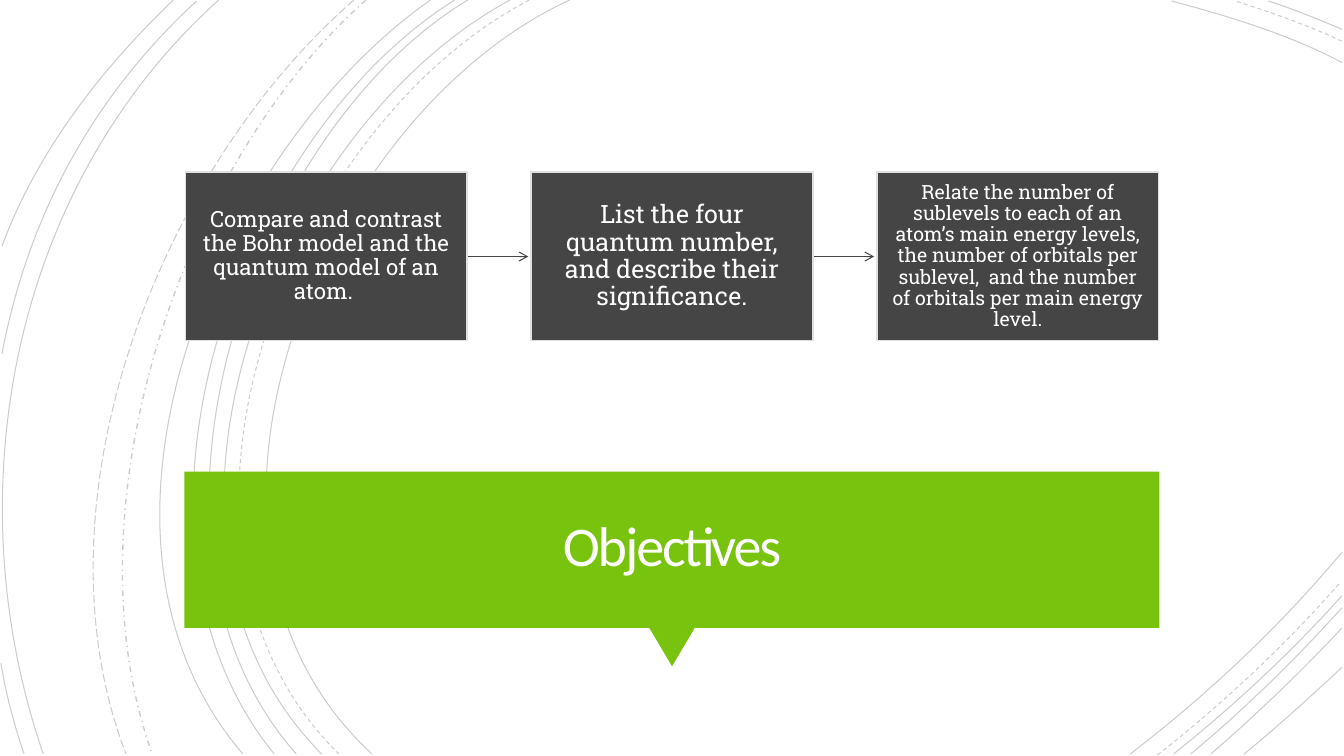
from lxml.etree import SubElement
from pptx import Presentation
from pptx.dml.color import RGBColor as Rgb
from pptx.enum.dml import MSO_LINE as Dash
from pptx.enum.shapes import MSO_CONNECTOR as Link, MSO_SHAPE as Preset
from pptx.enum.text import MSO_ANCHOR as Anchor, PP_ALIGN as Align
from pptx.oxml.ns import qn
from pptx.util import Cm, Pt

# Content
TITLE = "Objectives"
OBJECTIVES = [  # text, type size
    ("Compare and contrast the Bohr model and the quantum model of an atom. ", 16),
    ("List the four quantum number, and describe their significance.", 18),
    ("Relate the number of sublevels to each of an atom’s main energy levels, "
     "the number of orbitals per sublevel,  and the number of orbitals per main "
     "energy level.", 14),
]

# Background arcs by line style: start, two control points, end (inches)
ARCS = {
    (Dash.SOLID, 0.75): [
        [(5.65, 0), (3.15, 1.15), (1.43, 5.4), (3.69, 7.48)],
        [(5.06, 0), (2.7, 1.27), (1.1, 5.37), (3.19, 7.48)],
        [(4.64, 0), (2.44, 1.33), (1.1, 5.41), (2.94, 7.48)],
        [(4.51, 0), (2.31, 1.38), (0.97, 5.33), (2.72, 7.48)],
        [(4.27, 0), (2.17, 1.47), (0.53, 5.29), (2.41, 7.48)],
        [(2.17, 0), (0.11, 1.85), (-0.46, 4.9), (0.43, 7.48)],
        [(1.95, 0.01), (0.92, 0.96), (0.28, 2.14), (0.02, 3.51)],
        [(1.72, 0), (1, 0.69), (0.37, 1.5), (0.02, 2.44)],
        [(0.01, 6.58), (0.06, 6.89), (0.14, 7.19), (0.24, 7.48)],
        [(13.31, 0.62), (12.78, 0.34), (12.18, 0.16), (11.62, 0.01)],
        [(13.31, 0.29), (13.07, 0.19), (12.83, 0.09), (12.58, 0.01)],
        [(11.21, 7.48), (11.97, 6.9), (12.69, 6.22), (13.31, 5.48)],
        [(11.64, 7.48), (12.23, 7.01), (12.8, 6.48), (13.31, 5.91)],
        [(11.81, 7.48), (12.34, 7.04), (12.84, 6.55), (13.31, 6.03)],
        [(12.01, 7.48), (12.46, 7.09), (12.9, 6.67), (13.31, 6.23)],
        [(12.34, 7.48), (12.67, 7.21), (12.99, 6.92), (13.31, 6.62)],
    ],
    (Dash.DASH, 0.75): [
        [(5.25, 0), (2.85, 1.25), (1.23, 5.37), (3.36, 7.48)],
        [(13.31, 0.41), (12.97, 0.25), (12.6, 0.12), (12.25, 0.01)],
        [(11.48, 7.49), (12.13, 6.98), (12.75, 6.4), (13.3, 5.77)],
    ],
    (Dash.DASH_DOT, 1): [[(3.63, 0), (1.76, 1.66), (0.65, 5.09), (1.51, 7.48)]],
    (Dash.LONG_DASH, 0.75): [[(3.51, 0), (1.57, 1.69), (0.29, 4.99), (1.25, 7.48)]],
}

THEME = {
    "green": Rgb.from_string("78C30D"), "dark": Rgb.from_string("454545"),
    "edge": Rgb.from_string("E0E0E0"), "arc": Rgb.from_string("000000"),
    "title": Rgb.from_string("FFFEFF"), "text": Rgb.from_string("FFFFFF"),
    "title_font": "Calibri", "text_font": "Roboto Slab", "title_size": 40,
    "arc_opacity": 20, "title_spacing": -1.5,
}

# Layout in inches
PAGE = (13.33, 7.5)
BAND = (1.83, 4.68, 9.67, 1.55)
POINTER = (0.45, 0.38)
BOX_LEFT, BOX_TOP, BOX_WIDTH, BOX_HEIGHT = 1.84, 1.71, 2.79, 1.67
BOX_PITCH = 3.43
ARROW_LENGTH = 0.61


def inches(*values):
    return [Cm(value * 2.54) for value in values]


def apply(target, formats):
    for name, value in formats.items():
        setattr(target, name, value)


def add_block(page, preset, place, fill, edge=None):
    block = page.shapes.add_shape(preset, *inches(*place))
    block.shadow.inherit = False
    block.fill.solid()
    block.fill.fore_color.rgb = fill
    if edge is None:
        block.line.fill.background()
    else:
        block.line.color.rgb = edge
        block.line.width = Pt(1.25)
    return block


def write(block, text, inset, spacing, color, formats):
    margin, = inches(inset)
    frame = block.text_frame
    apply(frame, {"word_wrap": True, "vertical_anchor": Anchor.MIDDLE,
                  "margin_left": margin, "margin_right": margin,
                  "margin_top": margin, "margin_bottom": margin})
    para = frame.paragraphs[0]
    apply(para, {"alignment": Align.CENTER, "line_spacing": spacing})
    span = para.add_run()
    span.text = text
    apply(span.font, formats)
    span.font.color.rgb = color
    return span


def add_arc(page, points, dash, width):
    start, *rest = [inches(*point) for point in points]
    builder = page.shapes.build_freeform(*start)
    builder.add_line_segments(rest, close=False)
    arc = builder.convert_to_shape()

    # Turn the three straight segments into one cubic curve
    segments = arc._element.findall(".//" + qn("a:lnTo"))
    outline = segments[0].getparent()
    curve = SubElement(outline, qn("a:cubicBezTo"))
    for segment in segments:
        curve.append(segment[0])
        outline.remove(segment)

    arc.shadow.inherit = False
    arc.fill.background()
    arc.line.color.rgb = THEME["arc"]
    apply(arc.line, {"width": Pt(width), "dash_style": dash})
    color = arc.line._ln.find(".//" + qn("a:srgbClr"))
    SubElement(color, qn("a:alpha"), val=str(THEME["arc_opacity"] * 1000))


def add_arrow(page, left, y):
    arrow = page.shapes.add_connector(
        Link.STRAIGHT, *inches(left, y, left + ARROW_LENGTH, y))
    arrow.line.color.rgb = THEME["dark"]
    arrow.line.width = Pt(0.75)
    SubElement(arrow.line._ln, qn("a:tailEnd"), type="arrow")
    SubElement(arrow._element.spPr, qn("a:effectLst"))


def main():
    deck = Presentation()
    deck.slide_width, deck.slide_height = inches(*PAGE)
    page = deck.slides.add_slide(deck.slide_layouts[6])

    # Background arcs
    for (dash, width), arcs in ARCS.items():
        for points in arcs:
            add_arc(page, points, dash, width)

    # Title band with its pointer
    left, top, width, height = BAND
    pointer_left = left + (width - POINTER[0]) / 2
    pointer = add_block(page, Preset.ISOSCELES_TRIANGLE,
                        (pointer_left, top + height, *POINTER), THEME["green"])
    pointer.rotation = 180
    band = add_block(page, Preset.RECTANGLE, BAND, THEME["green"])
    span = write(band, TITLE, 0.25, 0.85, THEME["title"],
                 {"name": THEME["title_font"], "size": Pt(THEME["title_size"])})
    span.font._element.set("spc", str(int(THEME["title_spacing"] * 100)))

    # Objectives joined by arrows
    for index, (text, size) in enumerate(OBJECTIVES):
        left = BOX_LEFT + index * BOX_PITCH
        if index < len(OBJECTIVES) - 1:
            add_arrow(page, left + BOX_WIDTH, BOX_TOP + BOX_HEIGHT / 2)
        box = add_block(page, Preset.RECTANGLE, (left, BOX_TOP, BOX_WIDTH, BOX_HEIGHT),
                        THEME["dark"], THEME["edge"])
        write(box, text, 0.14, 0.9, THEME["text"],
              {"name": THEME["text_font"], "size": Pt(size)})

    deck.save("out.pptx")


if __name__ == "__main__":
    main()
